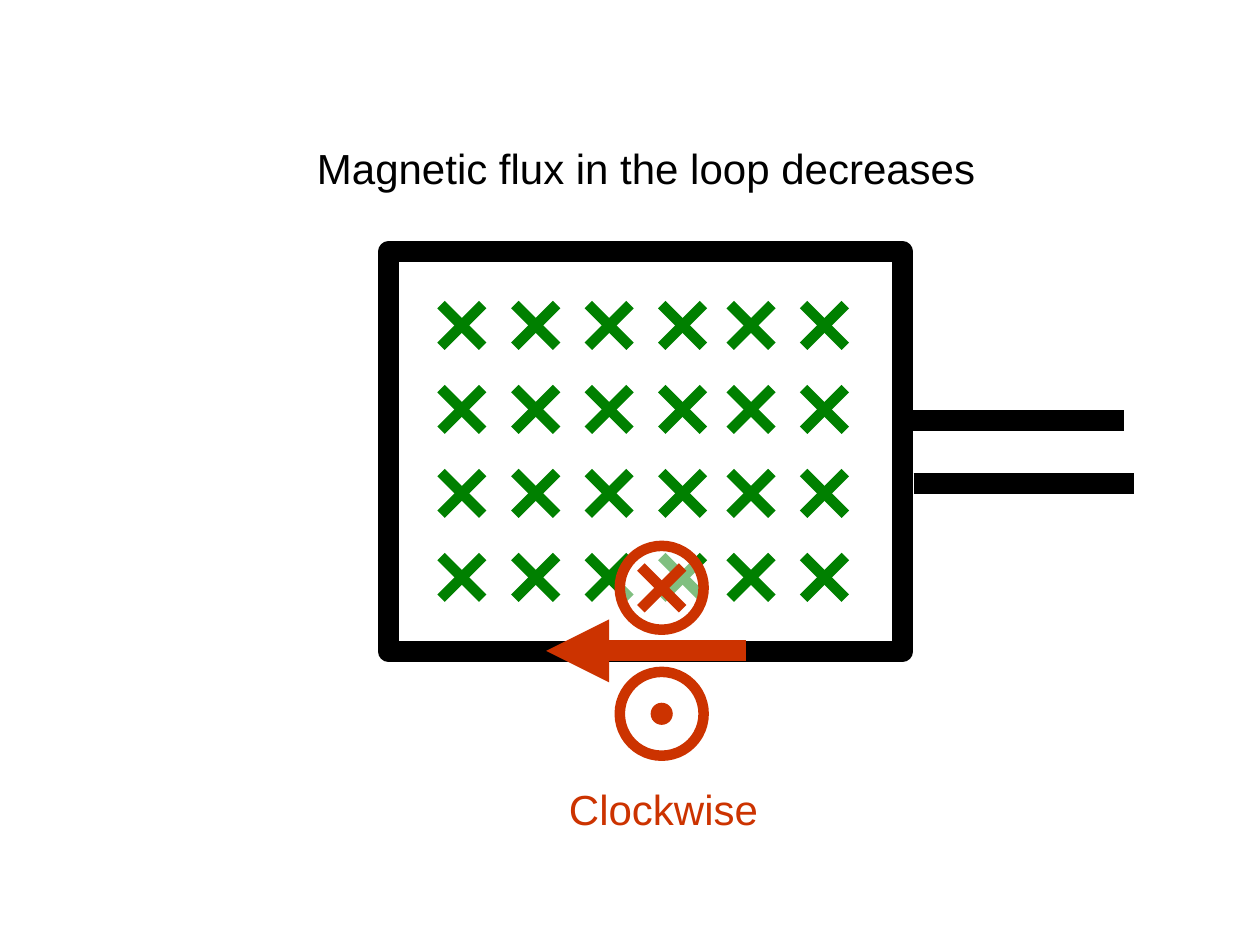
from itertools import product
from pptx import Presentation
from pptx.dml.color import RGBColor as Rgb
from pptx.enum.shapes import MSO_CONNECTOR as Link, MSO_SHAPE as Form
from pptx.enum.text import MSO_AUTO_SIZE as Fit
from pptx.oxml.ns import qn
from pptx.util import Cm, Pt
from lxml.etree import SubElement as Sub

THEME = dict(
    wire=Rgb(0, 0, 0), field=Rgb(0, 128, 0), flow=Rgb(204, 51, 0),
    white=Rgb(255, 255, 255), font="Arial", size=24, thick=12, thin=6, hair=0.75,
)
TITLE = ("Magnetic flux in the loop decreases", 6.14, 2.75, 13.92)
SENSE = ("Clockwise", 11.22, 15.67, 4.37)
LOOP = (7.83, 5.08, 10.37, 8.05)
LEADS = [(18.2, 8.47, 22.65), (18.42, 9.74, 22.86)]
COLS = [9.31, 10.8, 12.28, 13.76, 15.14, 16.62]
ROWS = [6.56 + 1.693 * i for i in range(4)]
ARROW = (15.03, 13.12, 11.01, 13.12)
MID = 13.34
INTO, OUT = 11.85, 14.39
CROSS, RING, DOT = 0.84, 1.69, 0.42


def line(host, ends, tint, width, head=False):
    link = host.add_connector(Link.STRAIGHT, *map(Cm, ends))
    link.line.color.rgb = THEME[tint]
    link.line.width = Pt(THEME[width])
    props = link._element.spPr
    if head:
        Sub(props.find(qn("a:ln")), qn("a:tailEnd"), type="triangle")
    Sub(props, qn("a:effectLst"))


def cross(host, x, y, tint):
    h = CROSS / 2
    for s in (1, -1):
        line(host, (x - h, y - s * h, x + h, y + s * h), tint, "thin")


def shape(host, form, box, tint, width, fill=None, alpha=None):
    item = host.add_shape(form, *map(Cm, box))
    item.shadow.inherit = False
    item.line.color.rgb = THEME[tint]
    item.line.width = Pt(THEME[width])
    if fill is None:
        item.fill.background()
        return
    item.fill.solid()
    item.fill.fore_color.rgb = THEME[fill]
    if alpha:
        color = item._element.spPr.find(qn("a:solidFill"))[0]
        Sub(color, qn("a:alpha"), val=str(alpha * 1000))


def disc(host, y, size, width, fill, alpha=None):
    box = (MID - size / 2, y - size / 2, size, size)
    shape(host, Form.OVAL, box, "flow", width, fill, alpha)


def label(host, words, x, y, wide, tint):
    box = host.add_textbox(Cm(x), Cm(y), Cm(wide), Cm(1.28))
    frame = box.text_frame
    frame.word_wrap = False
    frame.auto_size = Fit.SHAPE_TO_FIT_TEXT
    para = frame.paragraphs[0]
    para.text = words
    para.font.name = THEME["font"]
    para.font.size = Pt(THEME["size"])
    para.font.color.rgb = THEME[tint]


deck = Presentation()
deck.slide_width, deck.slide_height = Cm(25.4), Cm(19.05)
page = deck.slides.add_slide(deck.slide_layouts[6]).shapes

shape(page, Form.RECTANGLE, LOOP, "wire", "thick")
field = page.add_group_shape().shapes
for y, x in product(ROWS, COLS):
    cross(field, x, y, "field")
for x, y, end in LEADS:
    line(page, (x, y, end, y), "wire", "thick")
label(page, *TITLE, "wire")

flow = page.add_group_shape().shapes
disc(flow, INTO, RING, "thin", "white", 50)
cross(flow, MID, INTO, "flow")
disc(flow, OUT, RING, "thin", "white", 50)
disc(flow, OUT, DOT, "hair", "flow")
line(flow, ARROW, "flow", "thick", head=True)
label(flow, *SENSE, "flow")

deck.save("out.pptx")
